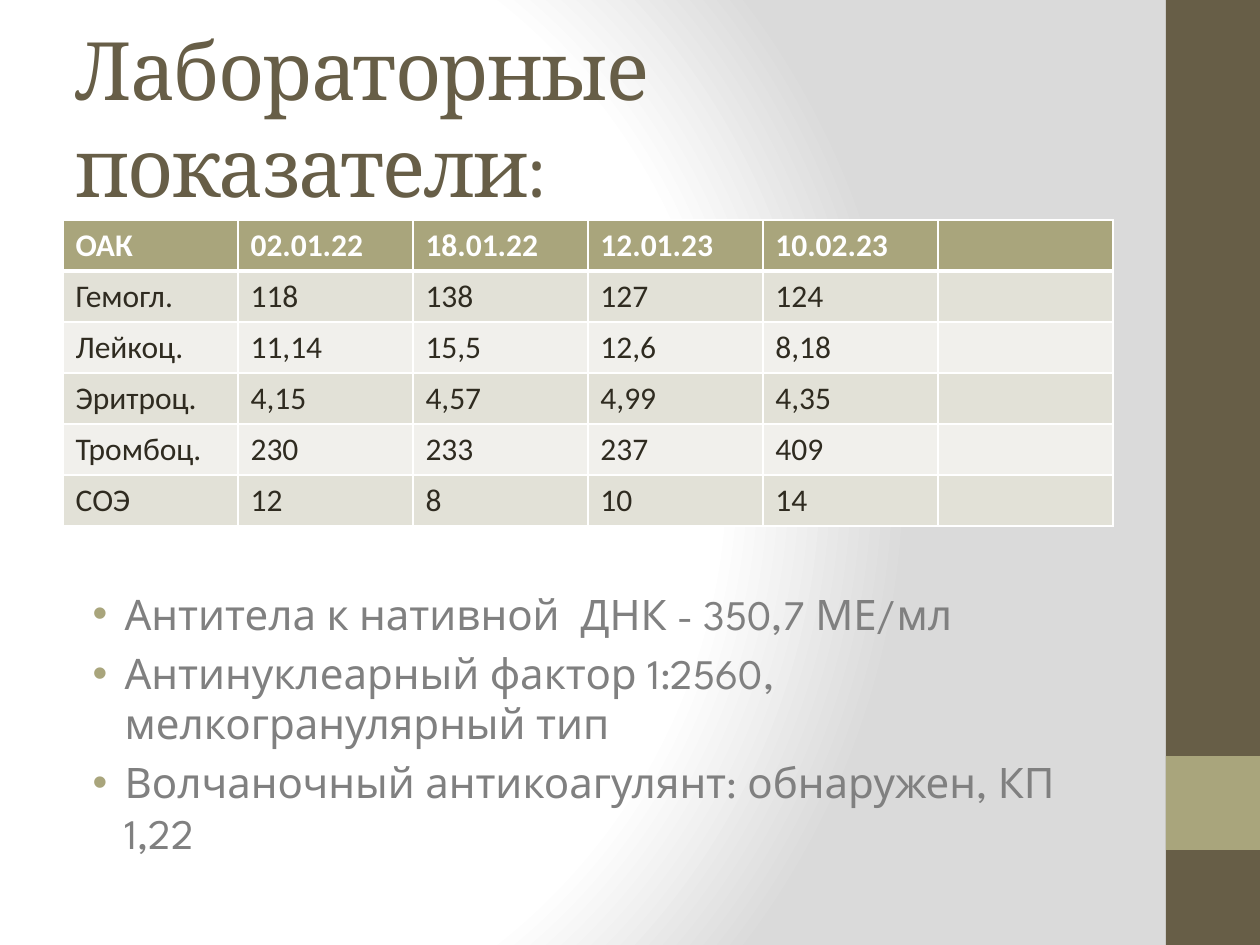
from pptx import Presentation
from pptx.dml.color import RGBColor
from pptx.enum.shapes import MSO_SHAPE
from pptx.enum.text import MSO_ANCHOR, MSO_AUTO_SIZE, PP_ALIGN
from pptx.oxml import parse_xml
from pptx.oxml.ns import nsdecls
from pptx.util import Pt

RECTANGLE = MSO_SHAPE.RECTANGLE
TOP, MIDDLE = MSO_ANCHOR.TOP, MSO_ANCHOR.MIDDLE
LEFT = PP_ALIGN.LEFT
NO_FIT, GROW = MSO_AUTO_SIZE.NONE, MSO_AUTO_SIZE.SHAPE_TO_FIT_TEXT
TITLE_AND_CONTENT = 1
EMU_PER_PX = 914400 / 126

BROWN, OLIVE, INK, GRAY, WHITE = "675E47", "A9A57C", "2F2B20", "808080", "FFFFFF"
BANDS = ("E2E1D7", "F1F0EC")

BLOOD_COUNT = [
    ("ОАК", "02.01.22", "18.01.22", "12.01.23", "10.02.23", ""),
    ("Гемогл.", "118", "138", "127", "124", ""),
    ("Лейкоц.", "11,14", "15,5", "12,6", "8,18", ""),
    ("Эритроц.", "4,15", "4,57", "4,99", "4,35", ""),
    ("Тромбоц.", "230", "233", "237", "409", ""),
    ("СОЭ", "12", "8", "10", "14", ""),
]
FINDINGS = [
    "Антитела к нативной  ДНК - 350,7 МЕ/мл",
    "Антинуклеарный фактор 1:2560, мелкогранулярный тип",
    "Волчаночный антикоагулянт: обнаружен, КП 1,22",
]


def px(length):
    return round(length * EMU_PER_PX)


def color(value):
    return RGBColor.from_string(value)


def place(shape, box):
    shape.left, shape.top, shape.width, shape.height = map(px, box)


def style(para, font_name, size, fill, bold=False):
    font = para.font
    font.name, font.size, font.bold = font_name, Pt(size), bold
    font.color.rgb = color(fill)


def paint_background(page):
    stops = "".join(
        f'<a:gs pos="{percent * 1000}"><a:srgbClr val="{value}"/></a:gs>'
        for percent, value in ((0, WHITE), (75, WHITE), (100, "DADADA"))
    )
    page.element.cSld.insert(0, parse_xml(
        f'<p:bg {nsdecls("p", "a")}><p:bgPr><a:gradFill rotWithShape="1">'
        f'<a:gsLst>{stops}</a:gsLst><a:path path="circle">'
        '<a:fillToRect l="20000" t="50000" r="100000" b="50000"/></a:path>'
        '</a:gradFill><a:effectLst/></p:bgPr></p:bg>'
    ))


def add_sidebar(page, box):
    left, top, width, height = box
    accent = (left, top + height * 4 // 5, width, width)
    for part, fill in ((box, BROWN), (accent, OLIVE)):
        bar = page.shapes.add_shape(RECTANGLE, *map(px, part))
        bar.shadow.inherit = False
        bar.fill.solid()
        bar.fill.fore_color.rgb = color(fill)
        bar.line.fill.background()


def fill_title(page, box):
    title = page.shapes.title
    place(title, box)
    frame = title.text_frame
    frame.text = "Лабораторные показатели:"
    frame.auto_size, frame.vertical_anchor = NO_FIT, MIDDLE
    para = frame.paragraphs[0]
    para.alignment = LEFT
    style(para, "Cambria", 46, BROWN)
    para.runs[0].font._element.set("spc", "-100")


def set_borders(cell, widths):
    """Draw white borders; widths maps a side (L, R, T, B, in that order) to points."""
    for index, (side, width) in enumerate(widths.items()):
        cell._tc.get_or_add_tcPr().insert(index, parse_xml(
            f'<a:ln{side} {nsdecls("a")} w="{Pt(width)}"><a:solidFill>'
            f'<a:srgbClr val="{WHITE}"/></a:solidFill></a:ln{side}>'
        ))


def add_blood_count(page, box):
    row_count, column_count = len(BLOOD_COUNT), len(BLOOD_COUNT[0])
    table = page.shapes.add_table(row_count, column_count, *map(px, box)).table
    for column in table.columns:
        column.width = px(box[2] / column_count)
    for row_index, values in enumerate(BLOOD_COUNT):
        header = row_index == 0
        table.rows[row_index].height = px(box[3] / row_count)
        for cell, value in zip(table.rows[row_index].cells, values):
            cell.text = value
            style(cell.text_frame.paragraphs[0], "Calibri", 18,
                  WHITE if header else INK, header)
            cell.fill.solid()
            cell.fill.fore_color.rgb = color(
                OLIVE if header else BANDS[(row_index - 1) % 2])
            set_borders(cell, {"L": 1, "R": 1, "T": 3 if row_index == 1 else 1,
                               "B": 3 if header else 1})


def fill_findings(page, box):
    body = page.placeholders[1]
    place(body, box)
    frame = body.text_frame
    frame.text = "\n".join(FINDINGS)
    frame.auto_size, frame.vertical_anchor = GROW, TOP
    for para in frame.paragraphs:
        style(para, "League Spartan", 24, GRAY)
        para.space_before = Pt(5)
        properties = para._p.get_or_add_pPr()
        properties.set("marL", str(px(48)))
        properties.set("indent", str(-px(32)))
        bullet = (
            f'<a:buClr {nsdecls("a")}><a:srgbClr val="{OLIVE}"/></a:buClr>',
            f'<a:buFont {nsdecls("a")} typeface="Arial"/>',
            f'<a:buChar {nsdecls("a")} char="•"/>',
        )
        for offset, markup in enumerate(bullet, start=1):
            properties.insert(offset, parse_xml(markup))


def main():
    deck = Presentation()
    deck.slide_width, deck.slide_height = px(1260), px(945)
    page = deck.slides.add_slide(deck.slide_layouts[TITLE_AND_CONTENT])
    paint_background(page)
    add_sidebar(page, (1166, 0, 94, 945))
    fill_title(page, (63, 38, 1050, 158))
    add_blood_count(page, (63, 220, 1050, 306))
    fill_findings(page, (64, 582, 1012, 287))
    deck.save("out.pptx")


if __name__ == "__main__":
    main()
